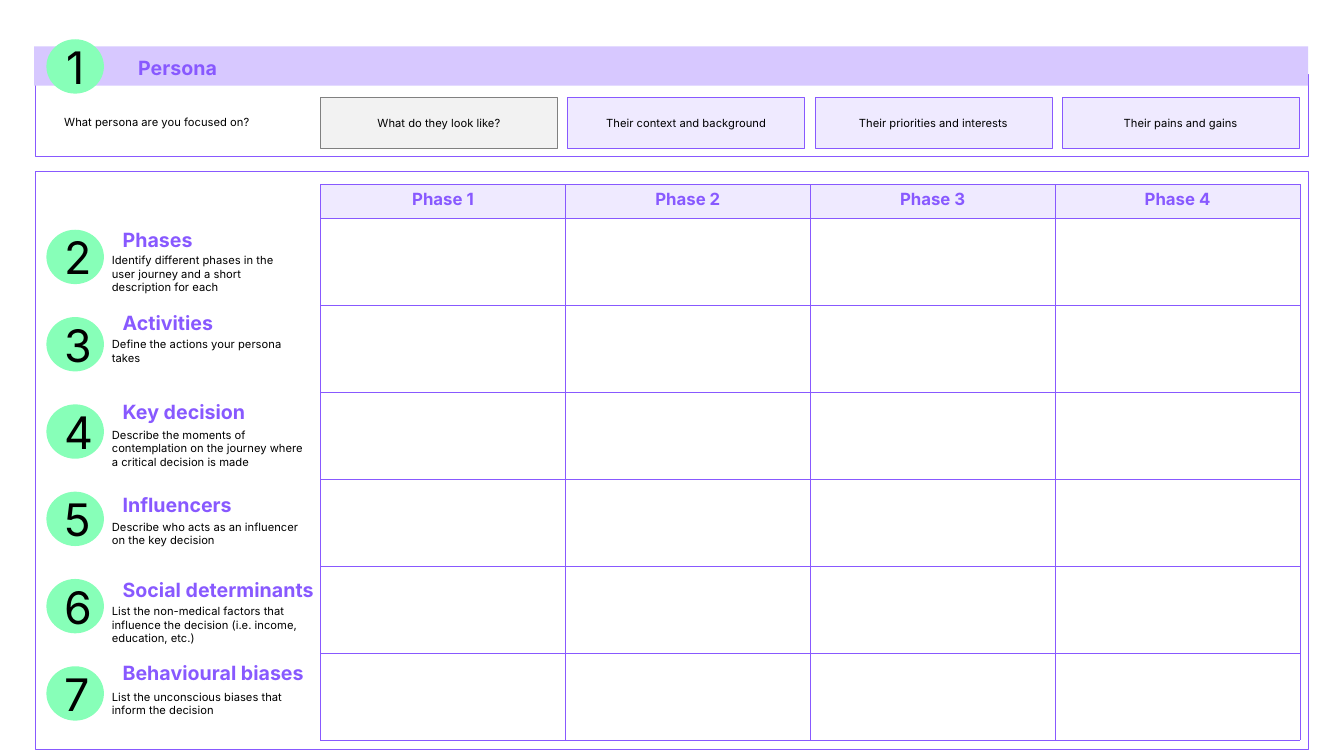
from lxml.etree import SubElement
from pptx import Presentation
from pptx.dml.color import RGBColor
from pptx.enum.shapes import MSO_SHAPE as Shape
from pptx.enum.text import MSO_ANCHOR as Anchor, MSO_AUTO_SIZE as Auto, PP_ALIGN as Align
from pptx.oxml.ns import qn
from pptx.util import Cm, Pt

HUES = {"ink": "000000", "white": "FFFFFF", "violet": "8859FF", "band": "D7C8FF",
        "pale": "EFEAFF", "mint": "87FFB8", "ash": "F2F2F2", "grey": "808080"}
CARDS = ["What do they look like?", "Their context and background",
         "Their priorities and interests", "Their pains and gains"]
PHASES = ["Phase 1", "Phase 2", "Phase 3", "Phase 4"]
STEPS = [
    ("Phases", 5.61, 3.25, 6.27, 5.23, 0.94,
     "Identify different phases in the user journey and a short description for each"),
    ("Activities", 7.72, 5, 8.38, 5.23, 0.61,
     "Define the actions your persona takes"),
    ("Key decision", 9.96, 5.18, 10.67, 5.46, 1.27,
     "Describe the moments of contemplation on the journey where a critical decision is made"),
    ("Influencers", 12.29, 5.18, 12.98, 5.23, 0.94,
     "Describe who acts as an influencer on the key decision"),
    ("Social determinants", 14.43, 5.92, 15.11, 5.23, 1.27,
     "List the non-medical factors that influence the decision (i.e. income, education, etc.)"),
    ("Behavioural biases", 16.54, 5.23, 17.27, 5.23, 0.94,
     "List the unconscious biases that inform the decision"),
]
GRID = 8.08


def tint(hue):
    """Return the named colour."""
    return RGBColor.from_string(HUES[hue])


class Sheet:
    """Hold the style and the current slide."""

    def __init__(self, slide, face="Inter"):
        """Keep the slide and its typeface."""
        self.slide, self.face = slide, face

    def letter(self, frame, text, size, hue="ink", bold=False, align=Align.LEFT):
        """Put one styled paragraph in a text frame."""
        frame.text = text
        para = frame.paragraphs[0]
        para.alignment = align
        font = para.font
        font.name, font.size, font.bold = self.face, Pt(size), bold
        font.color.rgb = tint(hue)

    def shape(self, kind, box, fill, line=None, width=0.5):
        """Draw a filled preset shape."""
        item = self.slide.shapes.add_shape(kind, *map(Cm, box))
        item.shadow.inherit = False
        item.fill.solid()
        item.fill.fore_color.rgb = tint(fill)
        if line:
            item.line.color.rgb = tint(line)
            item.line.width = Pt(width)
        else:
            item.line.fill.background()
        return item

    def panel(self, top, high):
        """Draw a white outlined frame."""
        self.shape(Shape.RECTANGLE, (0.89, top, 32.08, high), "white", "violet", 0.75)

    def title(self, text, box):
        """Turn the title placeholder into a coloured band above the frame."""
        item = self.slide.shapes.title
        item.element.getparent().append(item.element)
        item.left, item.top, item.width, item.height = map(Cm, box)
        item.fill.solid()
        item.fill.fore_color.rgb = tint("band")
        frame = item.text_frame
        frame.auto_size, frame.vertical_anchor = Auto.NONE, Anchor.MIDDLE
        frame.margin_left, frame.margin_top, frame.margin_bottom = Cm(2.62), Cm(0.1), 0
        self.letter(frame, text, 14, "violet", True)

    def badge(self, num, top):
        """Draw a numbered disc."""
        item = self.shape(Shape.OVAL, (1.17, top, 1.45, 1.37), "mint")
        item.text_frame.vertical_anchor = Anchor.MIDDLE
        self.letter(item.text_frame, str(num), 32, align=Align.CENTER)

    def card(self, text, left, fill, line):
        """Draw a captioned card."""
        item = self.shape(Shape.RECTANGLE, (left, 2.46, 5.97, 1.27), fill, line)
        item.text_frame.vertical_anchor = Anchor.MIDDLE
        self.letter(item.text_frame, text, 8, align=Align.CENTER)

    def label(self, text, box, size=8, hue="ink", bold=False):
        """Add a wrapped text box."""
        frame = self.slide.shapes.add_textbox(*map(Cm, box)).text_frame
        frame.word_wrap, frame.auto_size = True, Auto.SHAPE_TO_FIT_TEXT
        self.letter(frame, text, size, hue, bold)

    def border(self, cell):
        """Outline a cell on every side."""
        props = cell._tc.get_or_add_tcPr()
        for side in ("lnL", "lnR", "lnT", "lnB"):
            line = SubElement(props, qn("a:" + side), w=str(Pt(0.5)))
            fill = SubElement(line, qn("a:solidFill"))
            SubElement(fill, qn("a:srgbClr"), val=HUES["violet"])

    def table(self, heads, count):
        """Add the grid with a header row and empty rows."""
        grid = self.slide.shapes.add_table(
            count + 1, len(heads), Cm(GRID), Cm(4.65), Cm(24.68), Cm(14)).table
        grid.first_row = grid.horz_banding = False
        for col in grid.columns:
            col.width = Cm(6.17)
        for i, row in enumerate(grid.rows):
            row.height = Cm(2.19 if i else 0.86)
        for cell in grid.iter_cells():
            self.border(cell)
            cell.fill.background()
        for cell, head in zip(grid.rows[0].cells, heads):
            cell.fill.solid()
            cell.fill.fore_color.rgb = tint("pale")
            self.letter(cell.text_frame, head, 12, "violet", True, Align.CENTER)


def main():
    """Build the user journey template."""
    deck = Presentation()
    deck.slide_width, deck.slide_height = Cm(33.87), Cm(19.05)
    sheet = Sheet(deck.slides.add_slide(deck.slide_layouts[5]))

    sheet.panel(1.88, 2.06)
    sheet.title("Persona", (0.86, 1.17, 32.11, 0.99))
    sheet.badge(1, 0.99)
    sheet.label("What persona are you focused on?", (1.37, 2.77, 5.97, 0.61))
    for i, text in enumerate(CARDS):
        fill, line = ("pale", "violet") if i else ("ash", "grey")
        sheet.card(text, GRID + i * 6.23, fill, line)

    sheet.panel(4.32, 14.58)
    sheet.table(PHASES, len(STEPS))
    for i, (name, top, wide, low, span, high, text) in enumerate(STEPS):
        sheet.badge(i + 2, 5.79 + i * 2.2)
        sheet.label(name, (2.84, top, wide, 0.86), 14, "violet", True)
        sheet.label(text, (2.57, low, span, high))
    deck.save("out.pptx")


if __name__ == "__main__":
    main()
